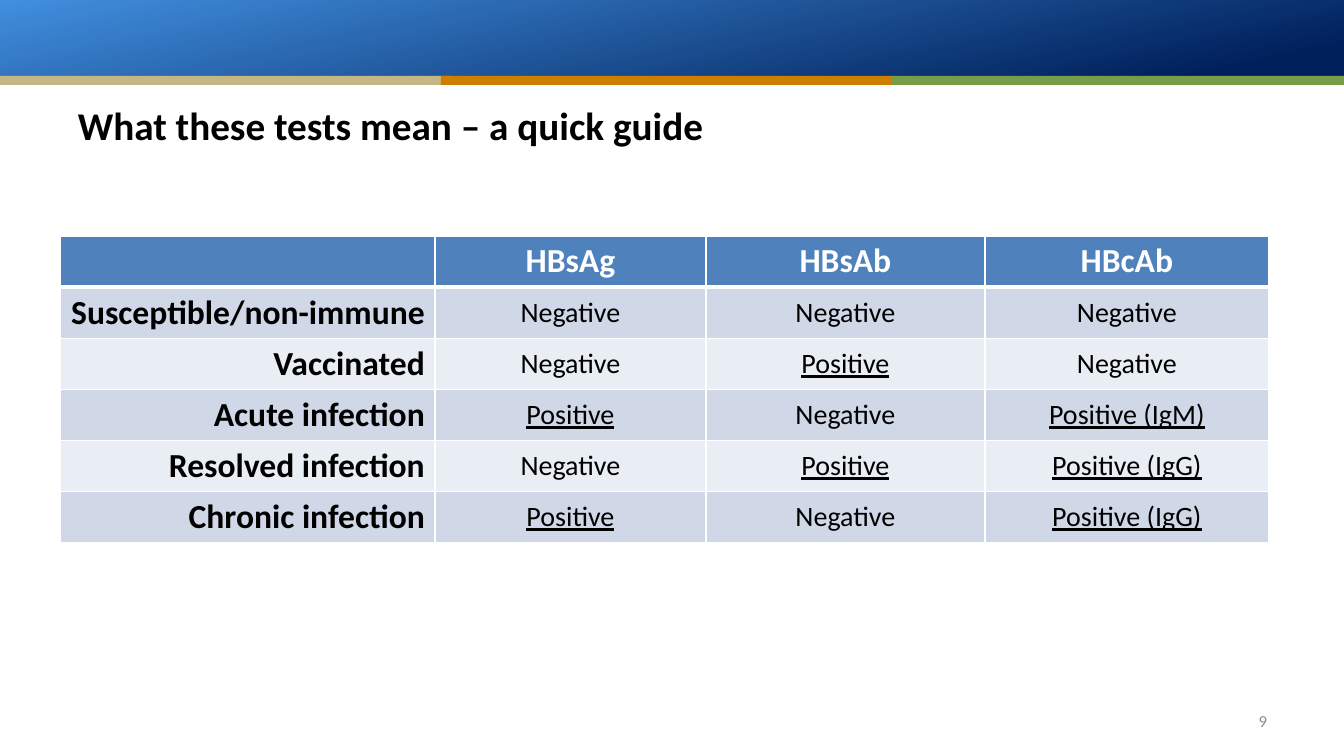
from dataclasses import dataclass
from typing import Any

from lxml.etree import SubElement
from pptx import Presentation
from pptx.dml.color import RGBColor
from pptx.enum.shapes import MSO_SHAPE as Shape
from pptx.enum.text import MSO_ANCHOR as Anchor, PP_ALIGN as Align
from pptx.oxml.ns import qn
from pptx.util import Emu, Pt

SCALE = 914400 / 100.8
WHITE = RGBColor(0xFF, 0xFF, 0xFF)
BLACK = RGBColor(0, 0, 0)
GRAY = RGBColor(0x8C, 0x8C, 0x8C)
NAVY = RGBColor(0x00, 0x20, 0x5B)
SKY = RGBColor(0x41, 0x8F, 0xDE)
TAN = RGBColor(0xC5, 0xB7, 0x83)
ORANGE = RGBColor(0xCF, 0x7F, 0x00)
GREEN = RGBColor(0x78, 0x9D, 0x4A)
BLUE = RGBColor(0x4F, 0x81, 0xBD)
BANDS = (RGBColor(0xE9, 0xED, 0xF4), RGBColor(0xD0, 0xD8, 0xE8))

HEAD = {"name": "Calibri", "size": Pt(24), "bold": True}
BODY = {"name": "Calibri", "size": Pt(20), "bold": False}
TITLE = {"name": "Calibri", "size": Pt(28), "bold": True}
NUMBER = {"name": "Calibri", "size": Pt(12), "bold": False}

COLS = (375, 271, 279, 284)
ROW = 51
ROWS = (
    ("", "HBsAg", "HBsAb", "HBcAb"),
    ("Susceptible/non-immune", "Negative", "Negative", "Negative"),
    ("Vaccinated", "Negative", "Positive", "Negative"),
    ("Acute infection", "Positive", "Negative", "Positive (IgM)"),
    ("Resolved infection", "Negative", "Positive", "Positive (IgG)"),
    ("Chronic infection", "Positive", "Negative", "Positive (IgG)"),
)


@dataclass(frozen=True)
class Box:
    left: int
    top: int
    width: int
    height: int

    def emu(self) -> tuple[Emu, ...]:
        return tuple(map(px, (self.left, self.top, self.width, self.height)))


@dataclass(frozen=True)
class Stripe:
    left: int
    color: RGBColor


@dataclass(frozen=True)
class Label:
    text: str
    box: Box
    align: Align
    color: RGBColor
    style: dict[str, Any]


STRIPES = (Stripe(0, TAN), Stripe(441, ORANGE), Stripe(892, GREEN))
LABELS = (
    Label("What these tests mean – a quick guide", Box(68, 90, 1210, 70),
          Align.LEFT, BLACK, TITLE),
    Label("9", Box(1198, 701, 79, 40), Align.RIGHT, GRAY, NUMBER),
)


def px(size: int) -> Emu:
    """Turn pixels into EMU."""
    return Emu(round(size * SCALE))


def write(frame: Any, text: str, align: Align, color: RGBColor,
          style: dict[str, Any]) -> None:
    """Fill a text frame with one styled paragraph."""
    para = frame.paragraphs[0]
    para.alignment = align
    run = para.add_run()
    run.text = text
    for key, value in style.items():
        setattr(run.font, key, value)
    run.font.color.rgb = color


def add_bar(slide: Any, box: Box) -> Any:
    """Add a plain rectangle without line or shadow."""
    bar = slide.shapes.add_shape(Shape.RECTANGLE, *box.emu())
    bar.shadow.inherit = False
    bar.line.fill.background()
    return bar


def add_banner(slide: Any) -> None:
    """Draw the gradient banner and the stripes below it."""
    fill = add_bar(slide, Box(0, 0, 1344, 78)).fill
    fill.gradient()
    fill.gradient_angle = 102
    for stop, place, color in zip(fill.gradient_stops, (0.09, 1), (NAVY, SKY)):
        stop.position = place
        stop.color.rgb = color
    for stripe in STRIPES:
        bar = add_bar(slide, Box(stripe.left, 76, 452, 9))
        bar.fill.solid()
        bar.fill.fore_color.rgb = stripe.color


def add_label(slide: Any, label: Label) -> None:
    """Add a text box with a centred anchor."""
    frame = slide.shapes.add_textbox(*label.box.emu()).text_frame
    frame.word_wrap = True
    frame.vertical_anchor = Anchor.MIDDLE
    write(frame, label.text, label.align, label.color, label.style)


def add_edges(cell: Any, widths: dict[str, int]) -> None:
    """Give a cell white borders of the given point widths."""
    props = cell._tc.get_or_add_tcPr()
    for side, width in widths.items():
        line = SubElement(props, qn(f"a:ln{side}"), w=str(Pt(width)))
        fill = SubElement(line, qn("a:solidFill"))
        SubElement(fill, qn("a:srgbClr"), val=str(WHITE))


def fill_cell(cell: Any, row: int, col: int, text: str) -> None:
    """Style one table cell by its place and write its text."""
    add_edges(cell, {"L": 1, "R": 1, "T": 3 if row == 1 else 1,
                     "B": 3 if row == 0 else 1})
    cell.fill.solid()
    cell.fill.fore_color.rgb = BANDS[row % 2] if row else BLUE
    style = HEAD
    if row and col:
        cell.vertical_anchor = Anchor.MIDDLE
        style = BODY | {"underline": text.startswith("Positive")}
    if text:
        write(cell.text_frame, text, Align.CENTER if col else Align.RIGHT,
              BLACK if row else WHITE, style)


def add_guide(slide: Any) -> None:
    """Build the table of test results."""
    box = Box(60, 236, sum(COLS), ROW * len(ROWS))
    table = slide.shapes.add_table(len(ROWS), len(COLS), *box.emu()).table
    for col, width in zip(table.columns, COLS):
        col.width = px(width)
    for r, texts in enumerate(ROWS):
        table.rows[r].height = px(ROW)
        for c, text in enumerate(texts):
            fill_cell(table.cell(r, c), r, c, text)


def main() -> None:
    """Build and save the slide."""
    deck = Presentation()
    deck.slide_width, deck.slide_height = px(1344), px(756)
    slide = deck.slides.add_slide(deck.slide_layouts[6])
    add_banner(slide)
    add_guide(slide)
    for label in LABELS:
        add_label(slide, label)
    deck.save("out.pptx")


if __name__ == "__main__":
    main()
